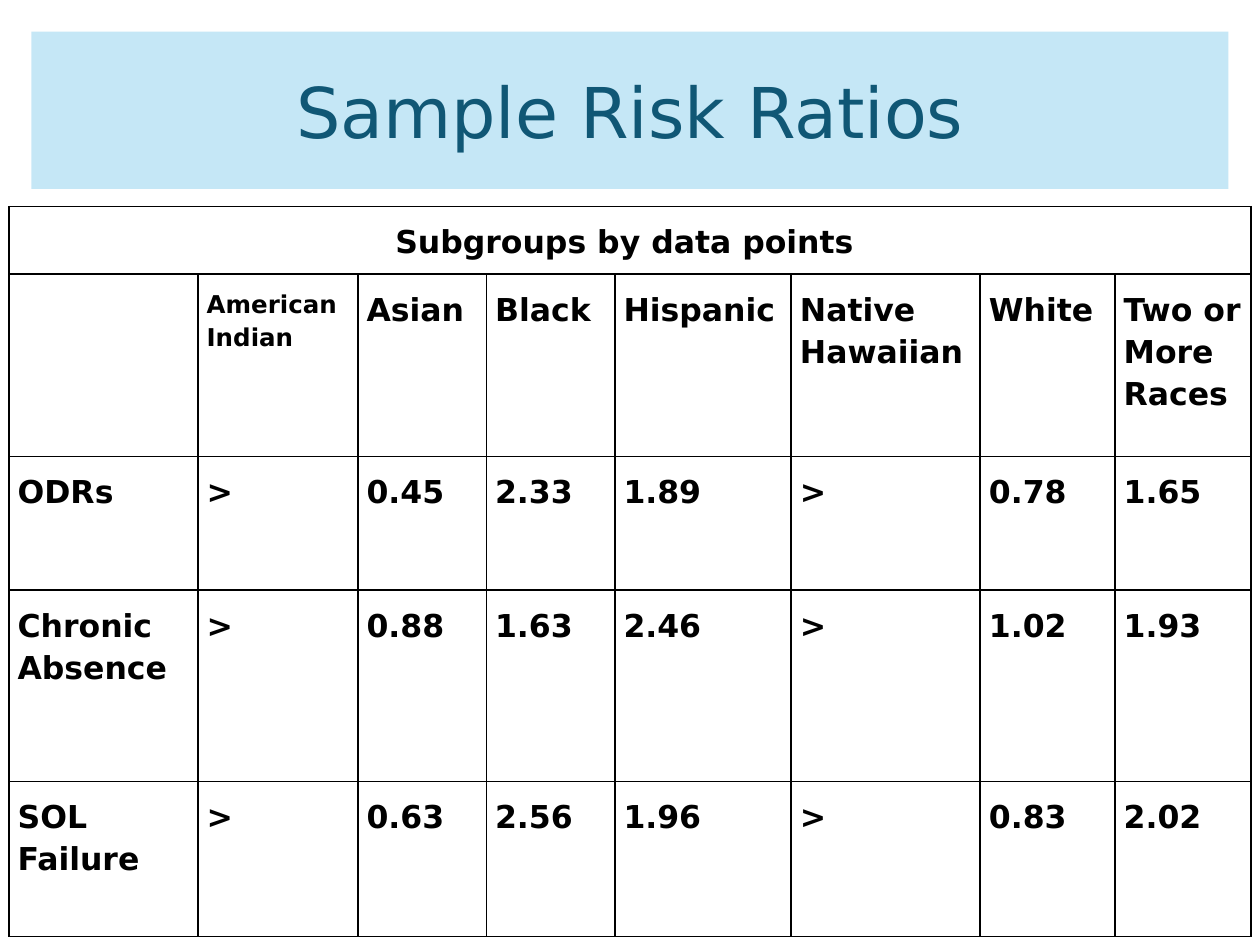
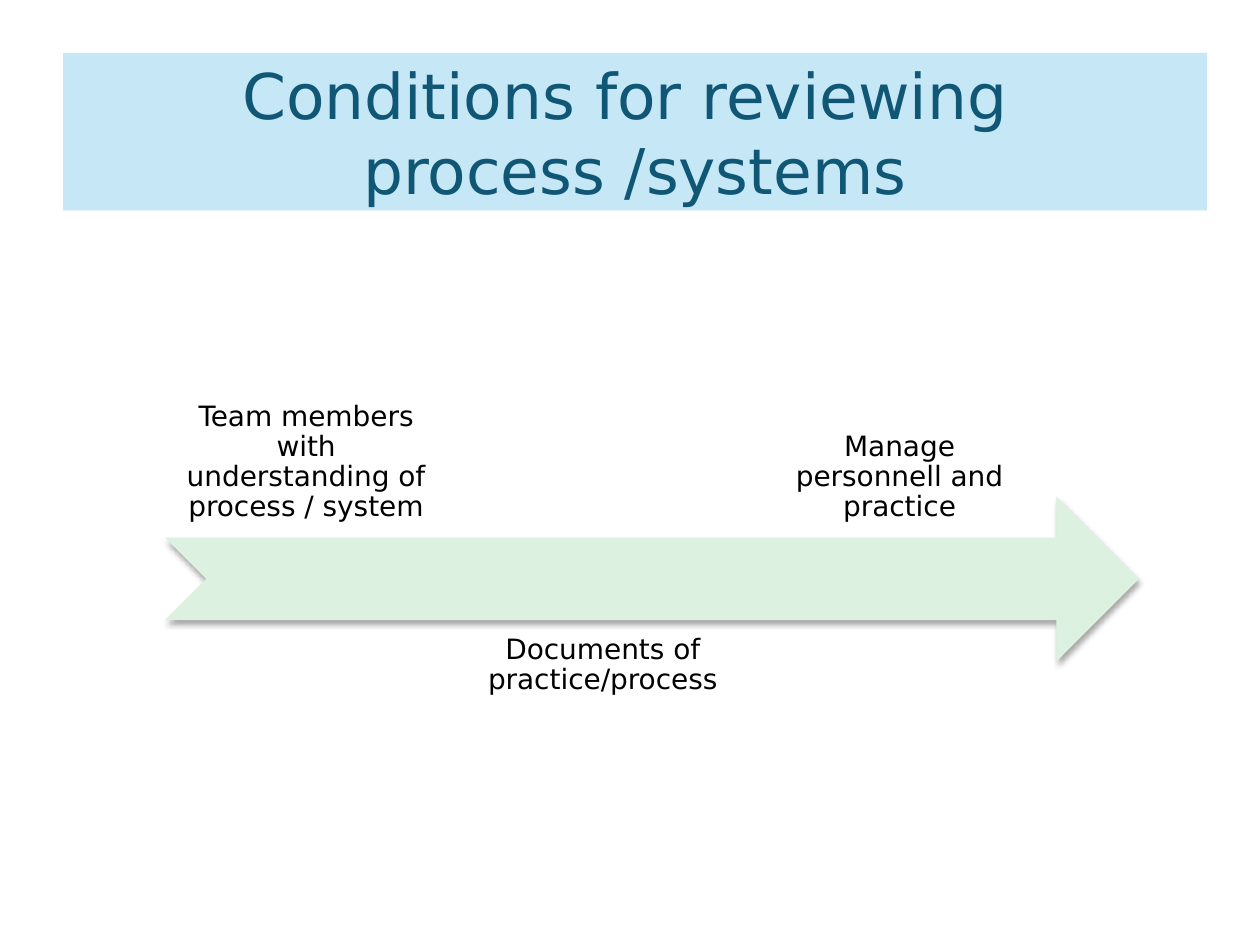
import dataclasses

import lxml.etree
import pptx
import pptx.dml.color
import pptx.enum.shapes
import pptx.enum.text
import pptx.oxml
import pptx.oxml.ns
import pptx.util

ALIGN = pptx.enum.text.PP_ALIGN
ANCHOR = pptx.enum.text.MSO_ANCHOR
SHAPE = pptx.enum.shapes.MSO_SHAPE


@dataclasses.dataclass(frozen=True)
class Theme:
    font: str = "DejaVu Sans"
    ink: str = "000000"
    title_ink: str = "105775"
    band: str = "A9DCF2"
    band_opacity: int = 67
    arrow: str = "DCF1DF"
    title_size: int = 40
    long_title_size: int = 36
    table_size: int = 18
    small_table_size: int = 14
    label_size: int = 16
    border_width: int = 1


class Deck:
    """Holds the theme and the current slide; lengths are grid columns and rows."""

    COLUMNS, ROWS = 100, 75

    def __init__(self, theme):
        self.theme = theme
        self.presentation = pptx.Presentation()
        self.presentation.slide_width = pptx.util.Inches(10)
        self.presentation.slide_height = pptx.util.Inches(7.5)
        self.slide = None

    def new_slide(self):
        blank_layout = self.presentation.slide_layouts[6]
        self.slide = self.presentation.slides.add_slide(blank_layout)

    def across(self, columns):
        return round(self.presentation.slide_width * columns / self.COLUMNS)

    def down(self, rows):
        return round(self.presentation.slide_height * rows / self.ROWS)

    def place(self, left, top, width, height):
        return self.across(left), self.down(top), self.across(width), self.down(height)

    def set_text(self, text_frame, text, size, color, align=ALIGN.CENTER, spacing=1.0, bold=False):
        text_frame.word_wrap = True
        paragraph = text_frame.paragraphs[0]
        paragraph.text = text
        paragraph.alignment = align
        paragraph.line_spacing = spacing
        paragraph.font.name = self.theme.font
        paragraph.font.size = pptx.util.Pt(size)
        paragraph.font.bold = bold
        paragraph.font.color.rgb = pptx.dml.color.RGBColor.from_string(color)

    def shape(self, kind, box, color):
        shape = self.slide.shapes.add_shape(kind, *self.place(*box))
        shape.shadow.inherit = False
        shape.fill.solid()
        shape.fill.fore_color.rgb = pptx.dml.color.RGBColor.from_string(color)
        shape.line.fill.background()
        return shape

    def title(self, text, box, size):
        band = self.shape(SHAPE.RECTANGLE, box, self.theme.band)
        fill_color = band._element.spPr.find(".//" + pptx.oxml.ns.qn("a:srgbClr"))
        alpha = lxml.etree.SubElement(fill_color, pptx.oxml.ns.qn("a:alpha"))
        alpha.set("val", str(self.theme.band_opacity * 1000))
        band.text_frame.vertical_anchor = ANCHOR.MIDDLE
        self.set_text(band.text_frame, text, size, self.theme.title_ink)

    def arrow(self, box):
        arrow = self.shape(SHAPE.NOTCHED_RIGHT_ARROW, box, self.theme.arrow)
        effects = arrow._element.spPr.find(pptx.oxml.ns.qn("a:effectLst"))
        effects.append(pptx.oxml.parse_xml(
            f'<a:outerShdw {pptx.oxml.ns.nsdecls("a")} blurRad="{pptx.util.Pt(3.1)}" '
            f'dist="{pptx.util.Pt(1.8)}" dir="5400000" rotWithShape="0">'
            f'<a:srgbClr val="{self.theme.ink}"><a:alpha val="35000"/></a:srgbClr>'
            '</a:outerShdw>'))

    def label(self, text, box, anchor):
        text_frame = self.slide.shapes.add_textbox(*self.place(*box)).text_frame
        text_frame.margin_left = text_frame.margin_right = self.across(1.2)
        text_frame.margin_top = text_frame.margin_bottom = self.down(1.2)
        text_frame.vertical_anchor = anchor
        self.set_text(text_frame, text, self.theme.label_size, self.theme.ink, spacing=0.9)

    def cell(self, cell, text, size, align):
        cell.margin_left = cell.margin_right = self.across(0.7)
        cell.margin_top = cell.margin_bottom = self.down(1)
        cell.fill.background()
        self.set_text(cell.text_frame, text, size, self.theme.ink, align, 1.15, True)
        properties = cell._tc.get_or_add_tcPr()
        for position, side in enumerate("LRTB"):
            properties.insert(position, pptx.oxml.parse_xml(
                f'<a:ln{side} {pptx.oxml.ns.nsdecls("a")} '
                f'w="{pptx.util.Pt(self.theme.border_width)}"><a:solidFill>'
                f'<a:srgbClr val="{self.theme.ink}"/></a:solidFill></a:ln{side}>'))

    def table(self, left, top, widths, heights, heading, rows, small_texts):
        box = self.place(left, top, sum(widths), sum(heights))
        table = self.slide.shapes.add_table(len(heights), len(widths), *box).table
        table.first_row = table.horz_banding = False
        for column, width in zip(table.columns, widths):
            column.width = self.across(width)
        for row, height in zip(table.rows, heights):
            row.height = self.down(height)
        # Heading across all columns
        table.cell(0, 0).merge(table.cell(0, len(widths) - 1))
        for column_index in range(len(widths)):
            text = "" if column_index else heading
            self.cell(table.cell(0, column_index), text, self.theme.table_size, ALIGN.CENTER)
        # Column names and values
        for row_index, texts in enumerate(rows, start=1):
            for column_index, text in enumerate(texts):
                small = text in small_texts
                size = self.theme.small_table_size if small else self.theme.table_size
                self.cell(table.cell(row_index, column_index), text, size, ALIGN.LEFT)


def add_risk_ratios(deck):
    deck.new_slide()
    deck.title("Sample Risk Ratios", (2.5, 2.5, 95, 12.5), deck.theme.title_size)
    deck.table(
        0.7, 16.4,
        widths=[15, 12.7, 10.2, 10.2, 14, 15, 10.7, 10.8],
        heights=[5.3, 14.5, 10.6, 15.2, 12.3],
        heading="Subgroups by data points ",
        rows=[
            ["", "American Indian", "Asian", "Black", "Hispanic",
             "Native Hawaiian", "White", "Two or More Races"],
            ["ODRs", ">", "0.45", "2.33", "1.89", ">", "0.78", "1.65"],
            ["Chronic Absence", ">", "0.88", "1.63", "2.46", ">", "1.02", "1.93"],
            ["SOL Failure", ">", "0.63", "2.56", "1.96", ">", "0.83", "2.02"],
        ],
        small_texts={"American Indian"})


def add_review_conditions(deck):
    deck.new_slide()
    # Arrow with labels alternately above and below
    arrow_left, label_step = 13.1, 23.55
    deck.arrow((arrow_left, 39.4, 77.3, 13.1))
    conditions = ["Team members with understanding of process / system",
                  "Documents of practice/process",
                  "Manage personnell and practice"]
    for index, condition in enumerate(conditions):
        top, anchor = (49.2, ANCHOR.TOP) if index % 2 else (29.6, ANCHOR.BOTTOM)
        deck.label(condition, (arrow_left + index * label_step, top, 22.4, 13.1), anchor)
    deck.title("Conditions for reviewing \vprocess /systems",
               (5, 4.2, 90.8, 12.5), deck.theme.long_title_size)


def main():
    deck = Deck(Theme())
    add_risk_ratios(deck)
    add_review_conditions(deck)
    deck.presentation.save("out.pptx")


if __name__ == "__main__":
    main()
